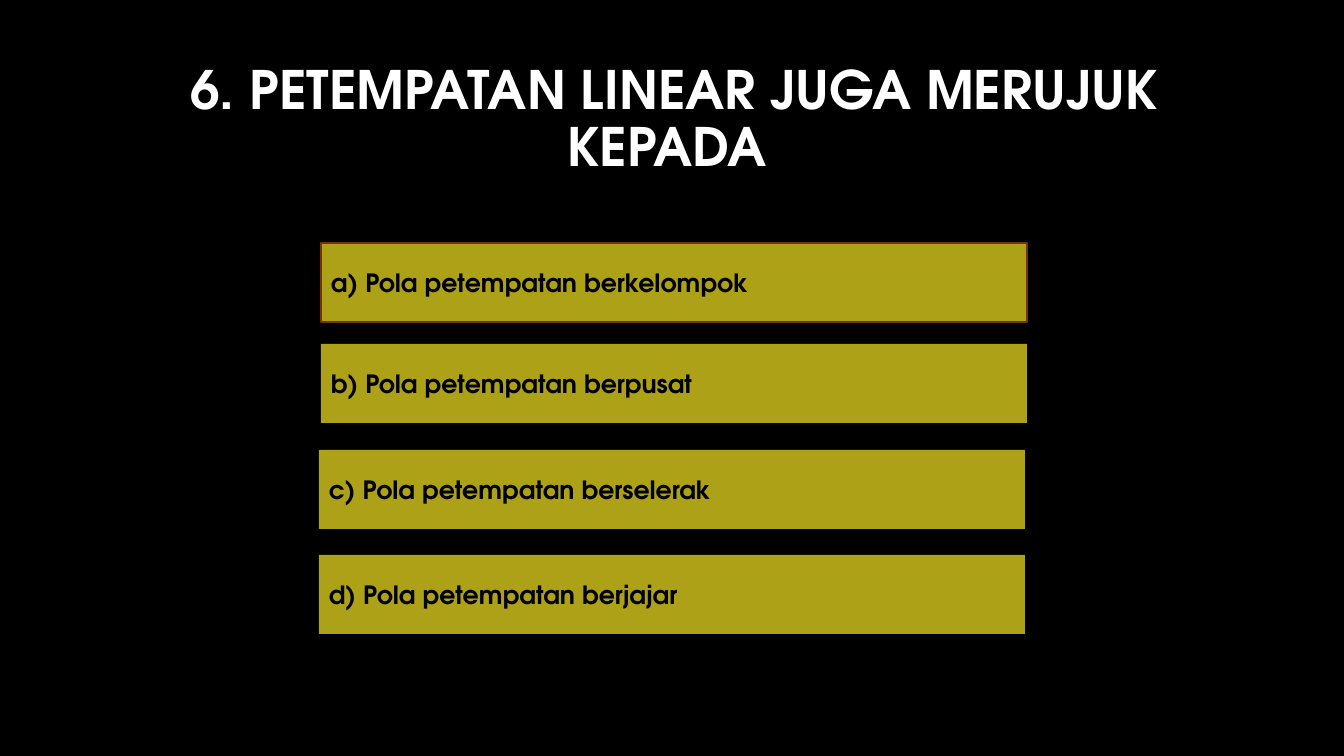
from dataclasses import dataclass

from pptx import Presentation
from pptx.dml.color import RGBColor
from pptx.enum import shapes, text
from pptx.util import Emu, Pt

EMU_PER_PX = 914400 / 100.8
FONT = "TeX Gyre Adventor"
BLACK = RGBColor(0x00, 0x00, 0x00)
WHITE = RGBColor(0xFF, 0xFF, 0xFF)
OLIVE = RGBColor(0xAD, 0xA1, 0x18)
RUST = RGBColor(0x77, 0x31, 0x0E)
BAR_WIDTH, BAR_HEIGHT = 706, 79


@dataclass
class Answer:
    label: str
    left: int
    top: int
    outline: RGBColor | None = None


ANSWERS = [
    Answer("a) Pola petempatan berkelompok", 321, 243, RUST),
    Answer("b) Pola petempatan berpusat", 321, 344),
    Answer("c) Pola petempatan berselerak", 319, 450),
    Answer("d) Pola petempatan berjajar", 319, 555),
]


def px(length: int) -> Emu:
    return Emu(round(length * EMU_PER_PX))


def write(box, words: str, size: float, color: RGBColor, align) -> None:
    frame = box.text_frame
    frame.text = words
    frame.word_wrap = True
    frame.auto_size = text.MSO_AUTO_SIZE.NONE
    frame.vertical_anchor = text.MSO_ANCHOR.MIDDLE
    para = frame.paragraphs[0]
    para.alignment = align
    for span in para.runs:
        span.font.name = FONT
        span.font.size = Pt(size)
        span.font.bold = True
        span.font.color.rgb = color


def add_title(page, words: str) -> None:
    title = page.shapes.title
    title.left, title.top = px(95), px(52)
    title.width, title.height = px(1159), px(138)
    write(title, words, 37.8, WHITE, text.PP_ALIGN.CENTER)
    title.text_frame.paragraphs[0].line_spacing = 0.9


def add_answer(page, answer: Answer) -> None:
    bar = page.shapes.add_shape(
        shapes.MSO_SHAPE.RECTANGLE,
        px(answer.left), px(answer.top), px(BAR_WIDTH), px(BAR_HEIGHT),
    )
    bar.shadow.inherit = False
    bar.fill.solid()
    bar.fill.fore_color.rgb = OLIVE
    if answer.outline is None:
        bar.line.fill.background()
    else:
        bar.line.color.rgb = answer.outline
        bar.line.width = Pt(1)
    write(bar, answer.label, 18, BLACK, text.PP_ALIGN.LEFT)


def main() -> None:
    deck = Presentation()
    deck.slide_width, deck.slide_height = px(1344), px(756)
    page = deck.slides.add_slide(deck.slide_layouts[5])

    # Black background
    page.background.fill.solid()
    page.background.fill.fore_color.rgb = BLACK

    # Question and its four answers
    add_title(page, "6. PETEMPATAN LINEAR JUGA MERUJUK KEPADA ")
    for answer in ANSWERS:
        add_answer(page, answer)

    deck.save("out.pptx")


if __name__ == "__main__":
    main()
